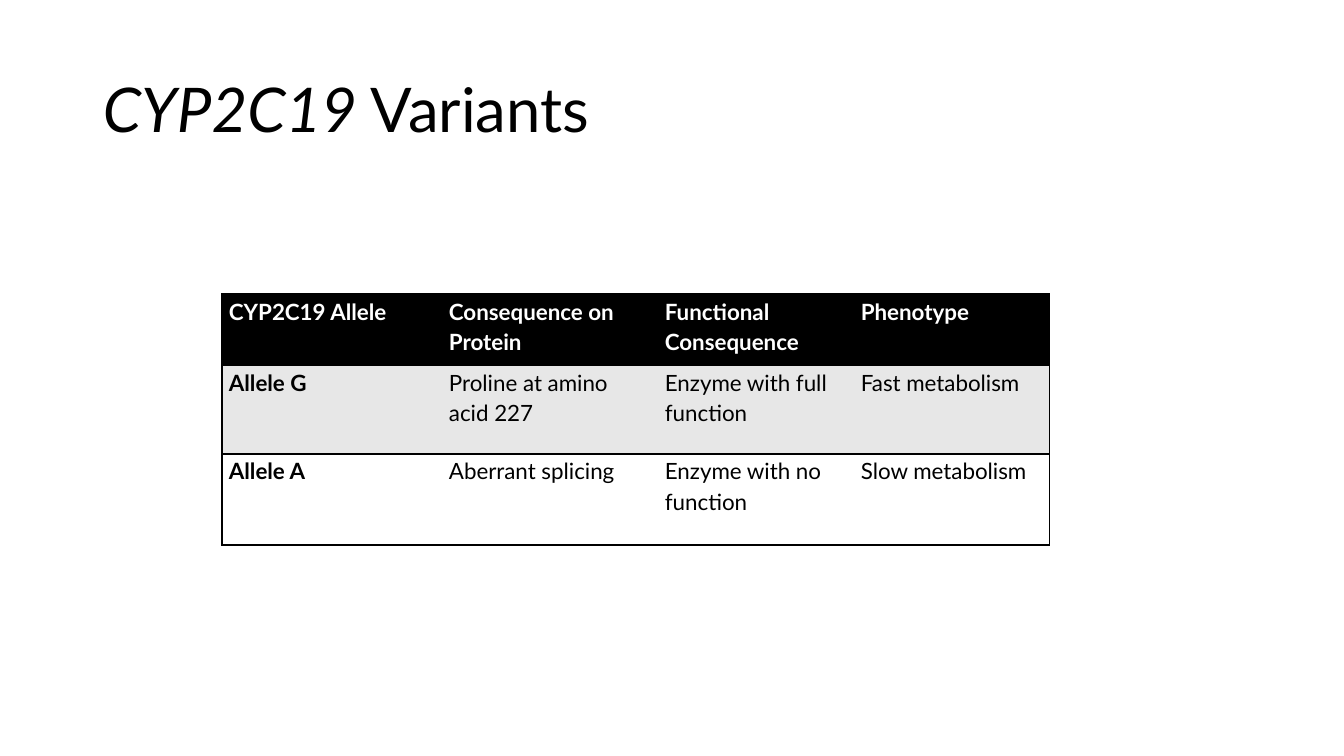
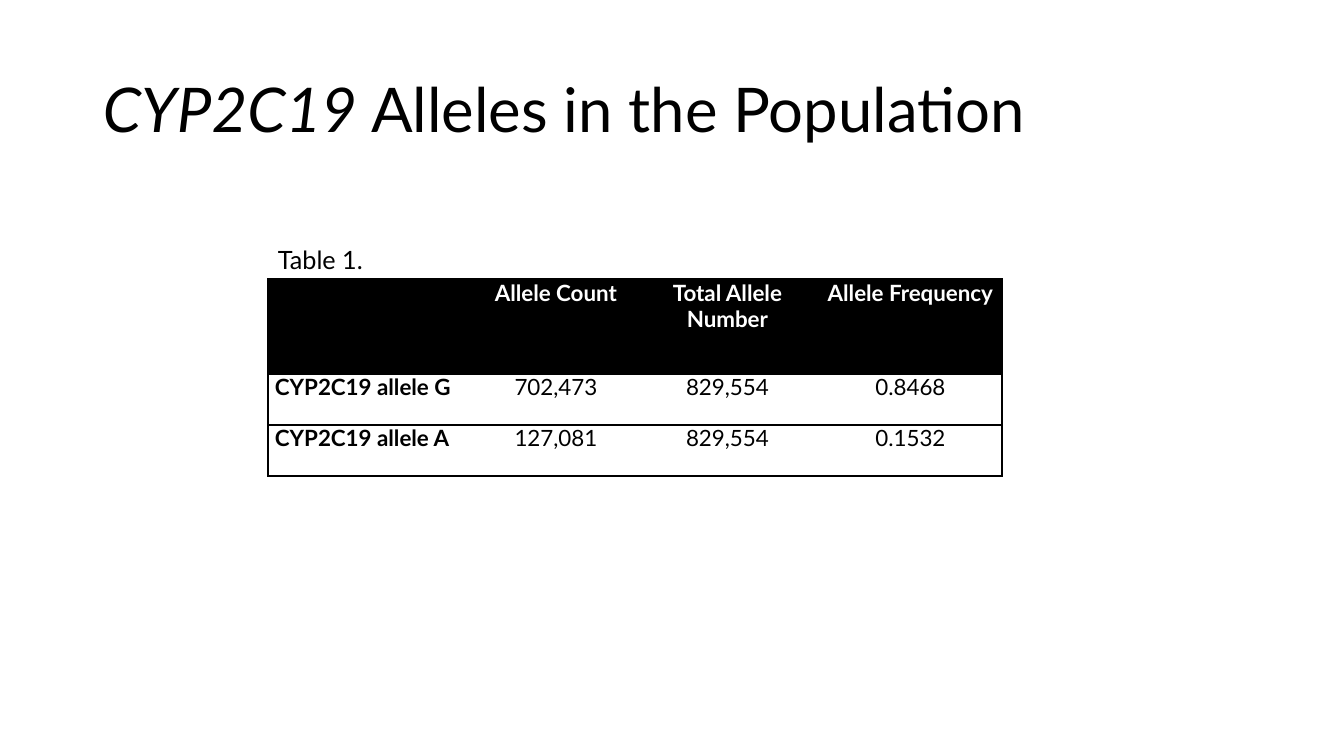
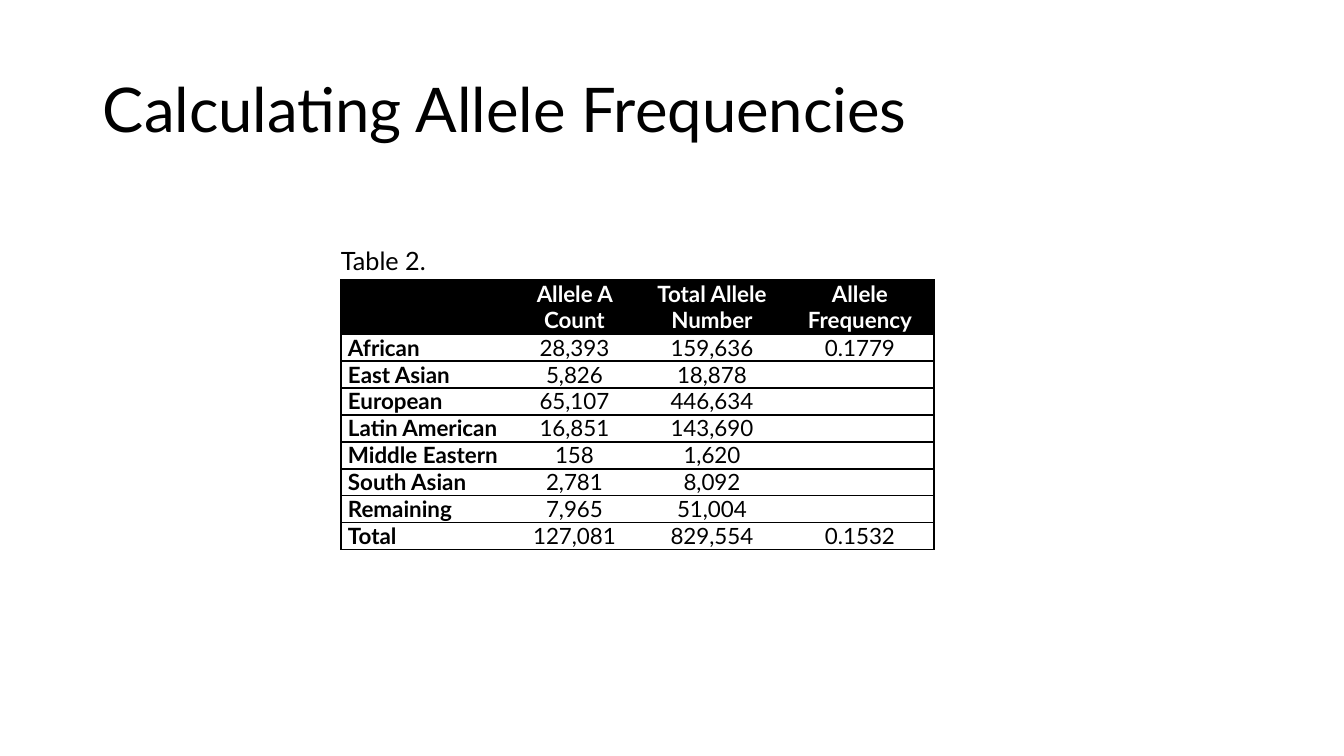
import pptx
import pptx.dml.color
import pptx.enum.text
import pptx.oxml.ns
import pptx.util
from lxml import etree

WIDE, HIGH = 1344, 756
FONT = "Lato"
BLACK, WHITE, GREY = "000000", "FFFFFF", "E7E7E7"
PLAIN = "{2D5ABB26-0587-4C30-8999-92F81FD0307C}"  # no style, no grid
CENTER = pptx.enum.text.PP_ALIGN.CENTER
MIDDLE = pptx.enum.text.MSO_ANCHOR.MIDDLE
qn = pptx.oxml.ns.qn
Pt = pptx.util.Pt


def px(n):
    return pptx.util.Emu(round(n * 12192000 / WIDE))


def rgb(code):
    return pptx.dml.color.RGBColor.from_string(code)


def style(par, size, color=BLACK, bold=False):
    font = par.font
    font.name, font.size, font.bold = FONT, Pt(size), bold
    font.color.rgb = rgb(color)


def text_box(slide, box, size):
    """Add an empty styled text box; return its frame and first paragraph."""
    frame = slide.shapes.add_textbox(*map(px, box)).text_frame
    frame.word_wrap = True
    par = frame.paragraphs[0]
    style(par, size)
    return frame, par


def add_title(slide, text, gene=""):
    """Add the title, with the gene name in italics before the text."""
    frame, par = text_box(slide, (93, 40, 1159, 146), 44)
    frame.vertical_anchor = MIDDLE
    par.line_spacing = 0.9
    if gene:
        run = par.add_run()
        run.text, run.font.italic = gene, True
    par.add_run().text = text


def add_label(slide, x, y, text):
    par = text_box(slide, (x, y, 186, 40), 18)[1]
    par.add_run().text = text


def add_edges(cell, sides):
    """Draw 1 pt black borders on the sides, given in the order L, R, T, B."""
    props = cell._tc.get_or_add_tcPr()
    for side in sides:
        line = etree.SubElement(props, qn("a:ln" + side), w=str(Pt(1)))
        fill = etree.SubElement(line, qn("a:solidFill"))
        etree.SubElement(fill, qn("a:srgbClr"), val=BLACK)


def fill_cell(cell, text, color, fill, bold, center, loose):
    cell.margin_left = cell.margin_right = px(7)
    cell.margin_top = cell.margin_bottom = 0
    cell.fill.solid()
    cell.fill.fore_color.rgb = rgb(fill)
    par = cell.text_frame.paragraphs[0]
    style(par, 16, color, bold)
    if center:
        par.alignment = CENTER
    if loose:
        par.line_spacing, par.space_after = 1.15, Pt(8)
    if text:
        par.add_run().text = text
    else:
        etree.SubElement(par._p, qn("a:endParaRPr"), sz="1600")


def add_grid(slide, x, y, cols, rows, data, fills=(WHITE,), loose=False):
    """Add a table with a black head; body rows take the fills in turn."""
    box = map(px, (x, y, sum(cols), sum(rows)))
    grid = slide.shapes.add_table(len(rows), len(cols), *box).table
    grid._tbl.tblPr.find(qn("a:tableStyleId")).text = PLAIN
    grid.horz_banding = False
    for col, width in zip(grid.columns, cols):
        col.width = px(width)
    for row, height in zip(grid.rows, rows):
        row.height = px(height)
    for r, line in enumerate(data):
        head = r == 0
        fill = BLACK if head else fills[(r - 1) % len(fills)]
        for c, text in enumerate(line):
            cell = grid.cell(r, c)
            ends = ("L" if c == 0 else "") + ("R" if c == len(cols) - 1 else "")
            add_edges(cell, ends + "TB")
            fill_cell(cell, text, WHITE if head else BLACK, fill,
                      bold=head or c == 0, center=c > 0 and not loose, loose=loose)


def variants(slide):
    add_title(slide, " Variants", "CYP2C19")
    add_grid(slide, 222, 294, (220, 216, 196, 196), (71, 89, 91), (
        ("CYP2C19 Allele", "Consequence on Protein", "Functional Consequence", "Phenotype"),
        ("Allele G", "Proline at amino acid 227", "Enzyme with full function", "Fast metabolism"),
        ("Allele A", "Aberrant splicing", "Enzyme with no function", "Slow metabolism"),
    ), fills=(GREY, WHITE), loose=True)


def alleles(slide):
    add_title(slide, " Alleles in the Population", "CYP2C19")
    add_grid(slide, 268, 279, (208, 160, 183, 183), (95, 51, 51), (
        ("", "Allele Count", "Total Allele Number", "Allele Frequency"),
        ("CYP2C19 allele G", "702,473", "829,554", "0.8468"),
        ("CYP2C19 allele A", "127,081", "829,554", "0.1532"),
    ))
    add_label(slide, 268, 239, "Table 1.")


def counts(slide):
    add_title(slide, "Calculating Allele Frequencies")
    add_grid(slide, 341, 280, (170, 127, 148, 148), (54,) + (27,) * 8, (
        ("", "Allele A Count", "Total Allele Number", "Allele Frequency"),
        ("African", "28,393", "159,636", "0.1779"),
        ("East Asian", "5,826", "18,878", ""),
        ("European", "65,107", "446,634", ""),
        ("Latin American", "16,851", "143,690", ""),
        ("Middle Eastern", "158", "1,620", ""),
        ("South Asian", "2,781", "8,092", ""),
        ("Remaining", "7,965", "51,004", ""),
        ("Total", "127,081", "829,554", "0.1532"),
    ))
    add_label(slide, 331, 240, "Table 2.")


def main():
    deck = pptx.Presentation()
    deck.slide_width, deck.slide_height = px(WIDE), px(HIGH)
    for build in (variants, alleles, counts):
        build(deck.slides.add_slide(deck.slide_layouts[6]))
    deck.save("out.pptx")


if __name__ == "__main__":
    main()
